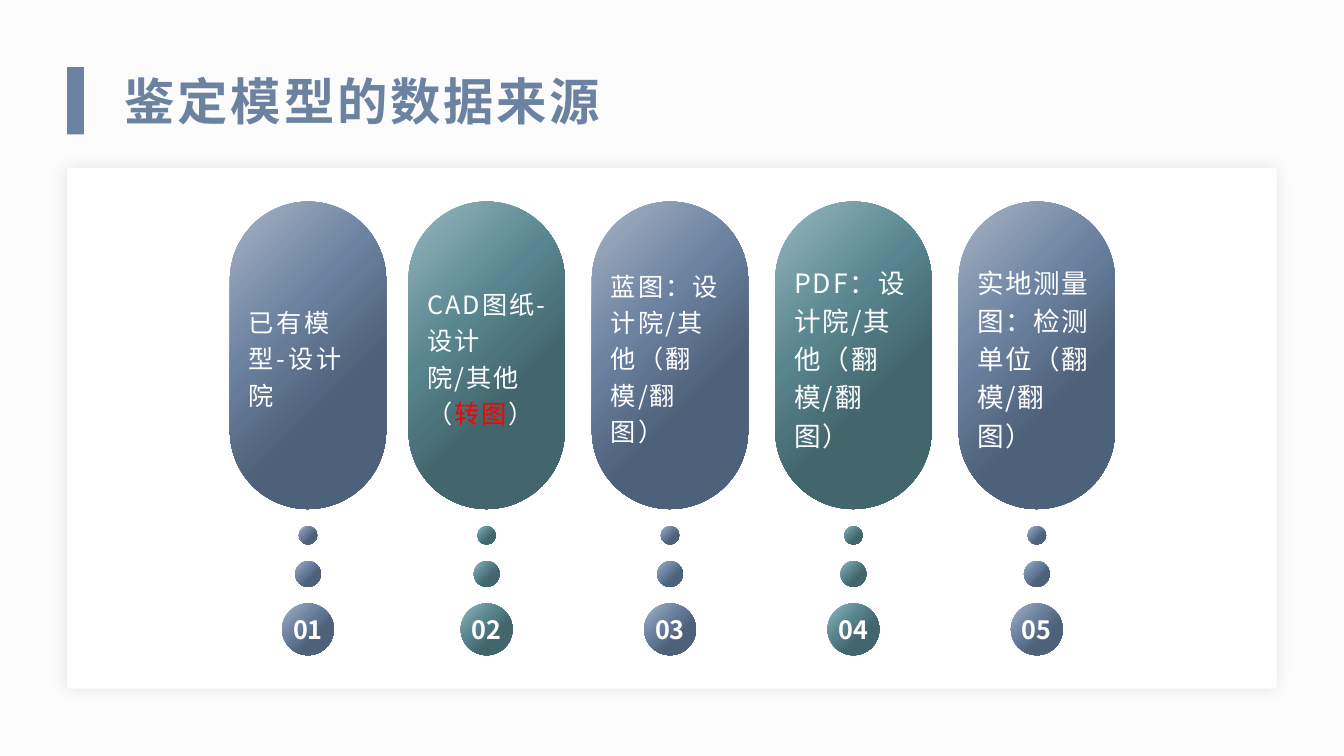
from dataclasses import dataclass

from lxml.etree import SubElement
from pptx import Presentation
from pptx.dml.color import RGBColor
from pptx.enum.lang import MSO_LANGUAGE_ID as Language
from pptx.enum.shapes import MSO_SHAPE as Preset
from pptx.enum.text import MSO_ANCHOR as Anchor, MSO_AUTO_SIZE as AutoSize, PP_ALIGN as Align
from pptx.oxml.ns import qn
from pptx.shapes.autoshape import Shape
from pptx.slide import Slide
from pptx.text.text import TextFrame, _Paragraph as Paragraph
from pptx.util import Pt

FONT_NAME = "Noto Sans CJK SC"
BACKGROUND = RGBColor(0xFC, 0xFC, 0xFD)
WHITE = RGBColor(0xFF, 0xFF, 0xFF)
RED = RGBColor(0xFF, 0x00, 0x00)
BLACK = RGBColor(0x00, 0x00, 0x00)
BLUE = RGBColor(0x6B, 0x82, 0xA0)
BLUE_LIGHT = RGBColor(0xA6, 0xB4, 0xC6)
BLUE_DARK = RGBColor(0x4E, 0x61, 0x7A)
TEAL = RGBColor(0x59, 0x86, 0x90)
TEAL_LIGHT = RGBColor(0x98, 0xB8, 0xC0)
TEAL_DARK = RGBColor(0x43, 0x65, 0x6C)

BLUE_SHADES = (BLUE_LIGHT, BLUE, BLUE_DARK, BLUE_DARK)
TEAL_SHADES = (TEAL_LIGHT, TEAL, TEAL_DARK, TEAL_DARK)
STOP_PERCENTS = (0, 37, 65, 100)

CAPSULE_WIDTH, CAPSULE_HEIGHT = 111.6, 219.6
TEXT_WIDTH, TEXT_HEIGHT = 98.6, 168.5
FIRST_CENTER, SECOND_CENTER, COLUMN_PITCH = 220, 347.6, 131

NO_MARGINS = dict(margin_left=0, margin_right=0, margin_top=0, margin_bottom=0)


@dataclass(frozen=True)
class Span:
    text: str
    color: RGBColor = WHITE


@dataclass(frozen=True)
class Source:
    spans: tuple[Span, ...]
    size: float
    spacing: float


@dataclass(frozen=True)
class Dot:
    top: float
    diameter: float


SOURCES = (
    Source((Span("已有模型-设计院"),), 18, 2),
    Source((Span("CAD图纸-设计院/其他（"), Span("转图", RED), Span("）")), 18, 1.4),
    Source((Span("蓝图：设计院/其他（翻模/翻图）"),), 18, 1.4),
    Source((Span("PDF：设计院/其他（翻模/翻图）"),), 19, 1.4),
    Source((Span("实地测量图：检测单位（翻模/翻图）"),), 19, 1.1),
)
SMALL_DOTS = (Dot(375.8, 13.2), Dot(400.8, 18.4))
NUMBER_DOT = Dot(431, 37)


def apply_format(target: object, values: dict[str, object]) -> None:
    for name, value in values.items():
        setattr(target, name, value)


def add_run(paragraph: Paragraph, span: Span, size: float,
            spacing: float = 0, bold: bool = False) -> None:
    run = paragraph.add_run()
    run.text = span.text
    apply_format(run.font, dict(size=Pt(size), bold=bold, name=FONT_NAME,
                                language_id=Language.SIMPLIFIED_CHINESE))
    run.font.color.rgb = span.color
    properties = run._r.get_or_add_rPr()
    properties.set("spc", str(round(spacing * 100)))
    SubElement(properties, qn("a:ea"), typeface=FONT_NAME)


def add_plain_shape(slide: Slide, preset: Preset, left: float, top: float,
                    width: float, height: float, color: RGBColor) -> Shape:
    shape = slide.shapes.add_shape(preset, Pt(left), Pt(top), Pt(width), Pt(height))
    shape.shadow.inherit = False
    shape.fill.solid()
    shape.fill.fore_color.rgb = color
    shape.line.fill.background()
    return shape


def shade(shape: Shape, colors: tuple[RGBColor, ...]) -> None:
    """Fill with a diagonal gradient, light at the top left."""
    shape.fill.gradient()
    shape.fill.gradient_angle = 315
    stops = shape._element.spPr.find(".//" + qn("a:gsLst"))
    for stop in list(stops):
        stops.remove(stop)
    for percent, color in zip(STOP_PERCENTS, colors):
        stop = SubElement(stops, qn("a:gs"), pos=str(percent * 1000))
        SubElement(stop, qn("a:srgbClr"), val=str(color))


def add_glow_shadow(shape: Shape, blur: float, alpha_percent: int) -> None:
    effects = shape._element.spPr.find(qn("a:effectLst"))
    shadow = SubElement(effects, qn("a:outerShdw"), blurRad=str(Pt(blur)),
                        dist="0", dir="0", algn="ctr", rotWithShape="0")
    color = SubElement(shadow, qn("a:srgbClr"), val=str(BLACK))
    SubElement(color, qn("a:alpha"), val=str(alpha_percent * 1000))


def add_dot(slide: Slide, center: float, dot: Dot, colors: tuple[RGBColor, ...]) -> Shape:
    shape = add_plain_shape(slide, Preset.OVAL, center - dot.diameter / 2, dot.top,
                            dot.diameter, dot.diameter, colors[1])
    shade(shape, colors)
    return shape


def add_description(slide: Slide, center: float, source: Source) -> None:
    box = slide.shapes.add_textbox(Pt(center - TEXT_WIDTH / 2), Pt(170),
                                   Pt(TEXT_WIDTH), Pt(TEXT_HEIGHT))
    frame: TextFrame = box.text_frame
    apply_format(frame, dict(word_wrap=True, vertical_anchor=Anchor.MIDDLE))
    paragraph = frame.paragraphs[0]
    apply_format(paragraph, dict(line_spacing=1.2, space_after=Pt(8)))
    for span in source.spans:
        add_run(paragraph, span, source.size, source.spacing)


def add_source_column(slide: Slide, index: int, source: Source) -> None:
    center = SECOND_CENTER + (index - 1) * COLUMN_PITCH if index else FIRST_CENTER
    colors = TEAL_SHADES if index % 2 else BLUE_SHADES
    capsule = add_plain_shape(slide, Preset.ROUNDED_RECTANGLE, center - CAPSULE_WIDTH / 2,
                              144, CAPSULE_WIDTH, CAPSULE_HEIGHT, colors[1])
    capsule.adjustments[0] = 0.5
    shade(capsule, colors)
    add_description(slide, center, source)
    for dot in SMALL_DOTS:
        add_dot(slide, center, dot, colors)
    frame = add_dot(slide, center, NUMBER_DOT, colors).text_frame
    apply_format(frame, NO_MARGINS | dict(vertical_anchor=Anchor.MIDDLE))
    paragraph = frame.paragraphs[0]
    paragraph.alignment = Align.CENTER
    add_run(paragraph, Span(f"{index + 1:02}"), 18, bold=True)


def add_title(slide: Slide) -> None:
    title = slide.shapes.title
    apply_format(title, dict(left=Pt(84), top=Pt(48), width=Pt(804), height=Pt(48)))
    frame = title.text_frame
    apply_format(frame, dict(margin_left=Pt(5), margin_right=Pt(5), margin_top=Pt(2.5),
                             margin_bottom=Pt(2.5), word_wrap=True,
                             auto_size=AutoSize.NONE, vertical_anchor=Anchor.MIDDLE))
    paragraph = frame.paragraphs[0]
    paragraph.alignment = Align.LEFT
    add_run(paragraph, Span("鉴定模型的数据来源", BLUE), 36, 2, bold=True)


def main() -> None:
    presentation = Presentation()
    apply_format(presentation, dict(slide_width=Pt(960), slide_height=Pt(540)))
    slide = presentation.slides.add_slide(presentation.slide_layouts[5])
    slide.background.fill.solid()
    slide.background.fill.fore_color.rgb = BACKGROUND

    add_title(slide)
    panel = add_plain_shape(slide, Preset.RECTANGLE, 48, 120, 864, 372, WHITE)
    add_glow_shadow(panel, blur=12, alpha_percent=10)
    for index, source in enumerate(SOURCES):
        add_source_column(slide, index, source)
    add_plain_shape(slide, Preset.RECTANGLE, 48, 48, 12, 48, BLUE)
    presentation.save("out.pptx")


if __name__ == "__main__":
    main()
